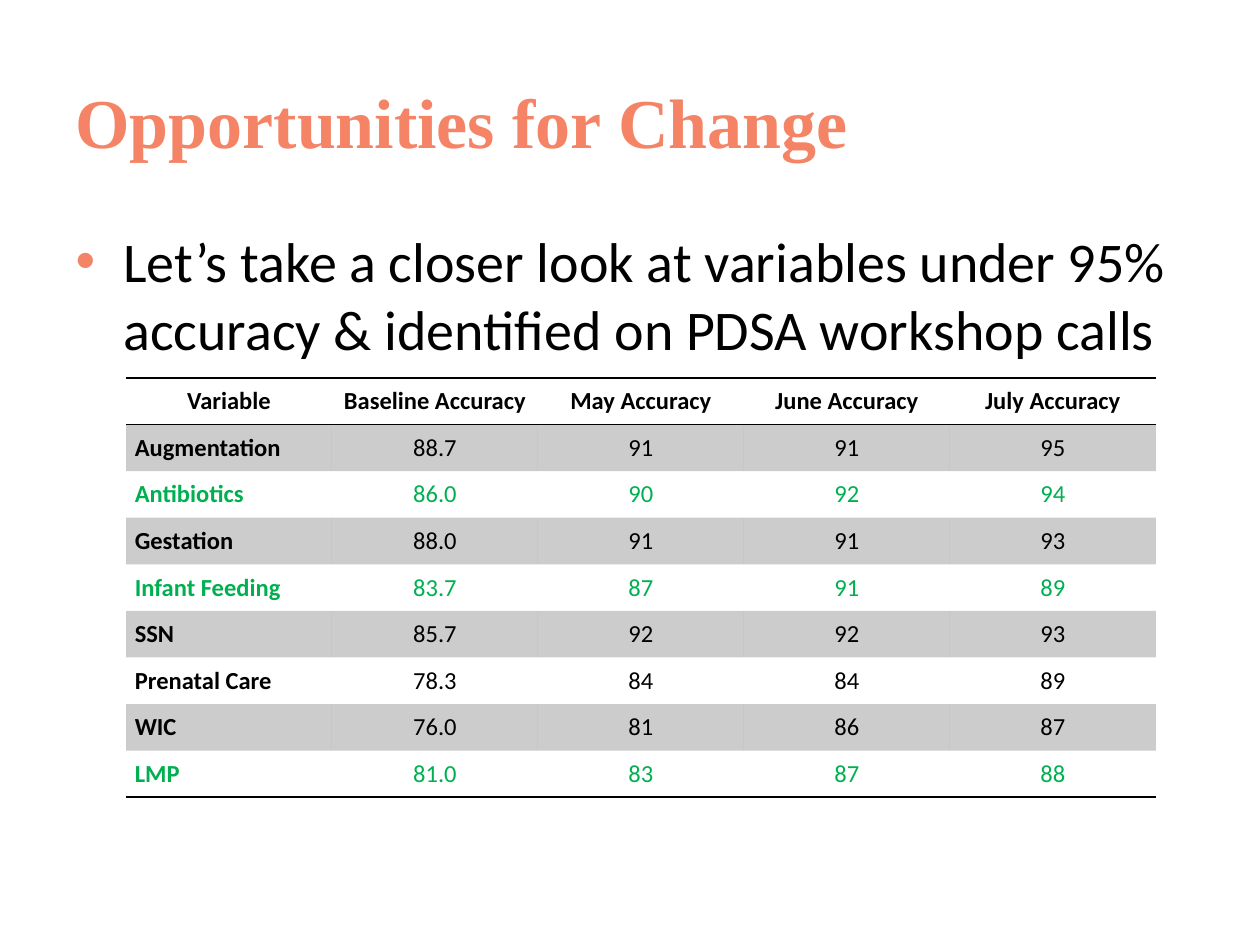
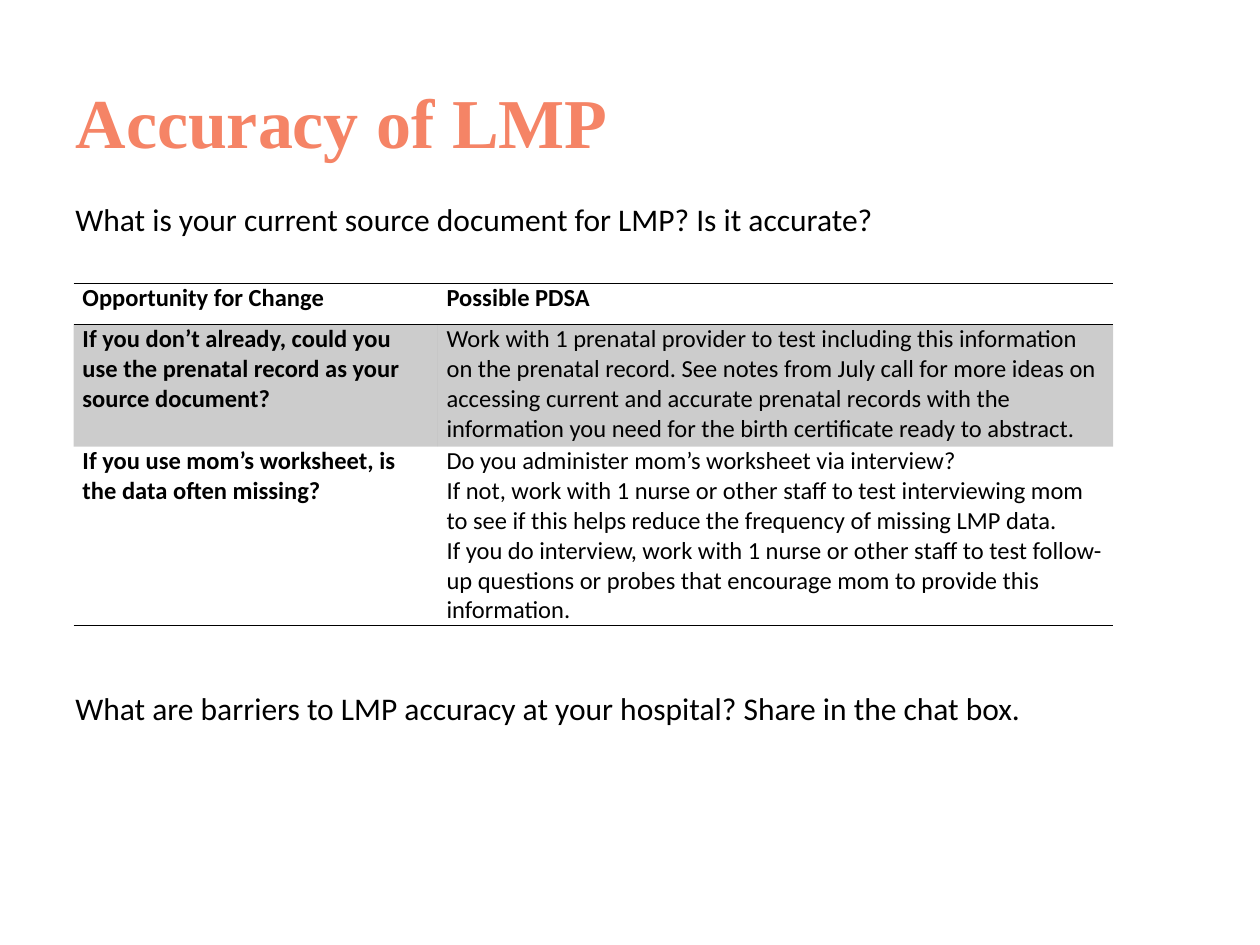
"""Build two slides on accuracy variables and opportunities for change."""
from dataclasses import dataclass

from lxml.etree import SubElement
from pptx import Presentation
from pptx.dml.color import RGBColor
from pptx.enum.text import MSO_ANCHOR, MSO_AUTO_SIZE, PP_ALIGN
from pptx.oxml import parse_xml
from pptx.oxml.ns import nsdecls, qn
from pptx.util import Inches, Pt


@dataclass(frozen=True)
class Theme:
    accent: str = "F58466"
    text: str = "000000"
    highlight: str = "00B050"
    band_alpha: int = 20
    title_font: str = "Times New Roman"
    body_font: str = "Calibri"
    title_size: int = 40
    list_size: int = 32
    note_size: int = 18
    table_size: int = 14
    rule_width: int = 1
    cols: int = 20
    rows: int = 15


class Deck:
    def __init__(self, prs, theme):
        self.prs, self.theme, self.slide = prs, theme, None
        self.col = prs.slide_width / theme.cols
        self.row = prs.slide_height / theme.rows

    def box(self, x, y, w, h):
        return (round(x * self.col), round(y * self.row),
                round(w * self.col), round(h * self.row))

    def place(self, sp, *grid):
        sp.left, sp.top, sp.width, sp.height = self.box(*grid)

    def style(self, tf, size, color=None, bold=False, font=None, align=PP_ALIGN.LEFT):
        for p in tf.paragraphs:
            p.alignment = align
            for r in p.runs:
                r.font.name = font or self.theme.body_font
                r.font.size = Pt(size)
                r.font.bold = bold
                r.font.color.rgb = RGBColor.from_string(color or self.theme.text)

    def add_slide(self, layout, title):
        t = self.theme
        self.slide = self.prs.slides.add_slide(self.prs.slide_layouts.get_by_name(layout))
        sp = self.slide.shapes.title
        self.place(sp, 1, 0.66, 18, 2.5)
        tf = sp.text_frame
        tf.text = title
        tf.auto_size = MSO_AUTO_SIZE.NONE
        tf.vertical_anchor = MSO_ANCHOR.MIDDLE
        self.style(tf, t.title_size, t.accent, True, t.title_font)

    def bullets(self, items, *grid):
        sp = self.slide.placeholders[1]
        self.place(sp, *grid)
        tf = sp.text_frame
        tf.text = "\n".join(items)
        tf.auto_size = MSO_AUTO_SIZE.NONE
        self.style(tf, self.theme.list_size)
        indent = Inches(0.38)
        for p in tf.paragraphs:
            pPr = p._p.get_or_add_pPr()
            pPr.set("marL", str(indent))
            pPr.set("indent", str(-indent))
            color = SubElement(pPr, qn("a:buClr"))
            SubElement(color, qn("a:srgbClr"), val=self.theme.accent)
            SubElement(pPr, qn("a:buChar"), char="•")

    def note(self, text, *grid):
        tf = self.slide.shapes.add_textbox(*self.box(*grid)).text_frame
        tf.word_wrap = True
        tf.auto_size = MSO_AUTO_SIZE.SHAPE_TO_FIT_TEXT
        tf.text = text
        self.style(tf, self.theme.note_size)

    def rules(self, cell, ruled):
        tcPr = cell._tc.get_or_add_tcPr()
        for i, side in enumerate("LRTB"):
            line = (f'<a:solidFill><a:srgbClr val="{self.theme.text}"/></a:solidFill>'
                    if side in ruled else "<a:noFill/>")
            tcPr.insert(i, parse_xml(
                f'<a:ln{side} {nsdecls("a")} w="{Pt(self.theme.rule_width)}">{line}</a:ln{side}>'))

    def shade(self, cell, banded):
        if not banded:
            cell.fill.background()
            return
        cell.fill.solid()
        cell.fill.fore_color.rgb = RGBColor.from_string(self.theme.text)
        clr = cell._tc.tcPr.find(f".//{qn('a:srgbClr')}")
        SubElement(clr, qn("a:alpha"), val=str(self.theme.band_alpha * 1000))

    def table(self, data, x, y, widths, heights, centered=False, highlights=()):
        t = self.theme
        tbl = self.slide.shapes.add_table(
            len(data), len(widths), *self.box(x, y, sum(widths), sum(heights))).table
        tbl.first_row = tbl.horz_banding = False
        for column, w in zip(tbl.columns, widths):
            column.width = round(w * self.col)
        for i, (values, h) in enumerate(zip(data, heights)):
            tbl.rows[i].height = round(h * self.row)
            ruled = "TB" if i == 0 else "B" if i == len(data) - 1 else "T" if i == 1 else ""
            color = t.highlight if values[0] in highlights else t.text
            for j, value in enumerate(values):
                cell = tbl.cell(i, j)
                cell.text_frame.text = value
                cell.margin_left = cell.margin_right = Inches(0.07)
                cell.margin_top = cell.margin_bottom = 0
                cell.vertical_anchor = MSO_ANCHOR.MIDDLE if centered else MSO_ANCHOR.TOP
                align = PP_ALIGN.CENTER if centered and (i == 0 or j) else PP_ALIGN.LEFT
                self.style(cell.text_frame, t.table_size, color, i == 0 or j == 0, align=align)
                self.shade(cell, i % 2 == 1)
                self.rules(cell, ruled)


ACCURACY = [
    ("Variable", "Baseline Accuracy", "May Accuracy", "June Accuracy", "July Accuracy"),
    ("Augmentation", "88.7", "91", "91", "95"),
    ("Antibiotics", "86.0", "90", "92", "94"),
    ("Gestation", "88.0", "91", "91", "93"),
    ("Infant Feeding", "83.7", "87", "91", "89"),
    ("SSN", "85.7", "92", "92", "93"),
    ("Prenatal Care", "78.3", "84", "84", "89"),
    ("WIC", "76.0", "81", "86", "87"),
    ("LMP", "81.0", "83", "87", "88"),
]

PDSA = [
    ("Opportunity for Change", "Possible PDSA"),
    ("If you don’t already, could you use the prenatal record as your source document?",
     "Work with 1 prenatal provider to test including this information on the prenatal "
     "record. See notes from July call for more ideas on accessing current and accurate "
     "prenatal records with the information you need for the birth certificate ready to "
     "abstract."),
    ("If you use mom’s worksheet, is the data often missing?",
     "Do you administer mom’s worksheet via interview?\n"
     "If not, work with 1 nurse or other staff to test interviewing mom to see if this "
     "helps reduce the frequency of missing LMP data.\n"
     "If you do interview, work with 1 nurse or other staff to test follow-up questions "
     "or probes that encourage mom to provide this information."),
]


def main():
    prs = Presentation()
    prs.slide_width, prs.slide_height = Inches(10), Inches(7.5)
    deck = Deck(prs, Theme())

    deck.add_slide("Title and Content", "Opportunities for Change")
    deck.bullets(["Let’s take a closer look at variables under 95% accuracy & identified "
                  "on PDSA workshop calls"], 1, 3.5, 18, 9.9)
    deck.table(ACCURACY, 2, 6, [3.27] * 5, [0.74] * len(ACCURACY), centered=True,
               highlights=("Antibiotics", "Infant Feeding", "LMP"))

    deck.add_slide("Title Only", "Accuracy of LMP")
    deck.table(PDSA, 1.17, 4.5, [5.78, 10.72], [0.65, 1.94, 2.84])
    deck.note("What is your current source document for LMP? Is it accurate?",
              1, 3.08, 16.84, 0.8)
    deck.note("What are barriers to LMP accuracy at your hospital? Share in the chat box.",
              1, 10.84, 16.84, 0.8)

    prs.save("out.pptx")


if __name__ == "__main__":
    main()
